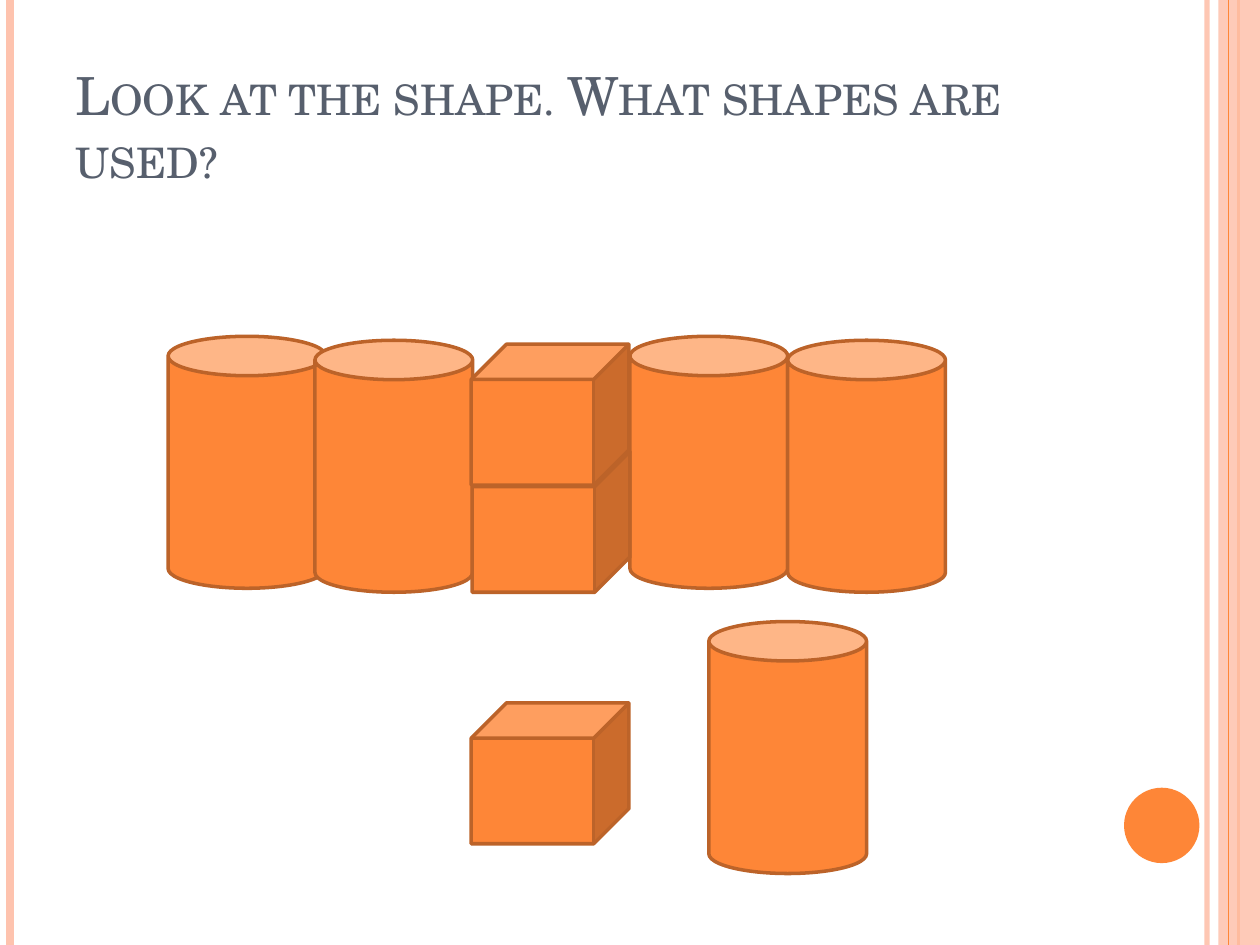
from pptx import Presentation
from pptx.dml.color import RGBColor as Rgb
from pptx.enum.shapes import MSO_CONNECTOR as Link, MSO_SHAPE as Kind
from pptx.enum.text import MSO_ANCHOR as Anchor
from pptx.oxml.ns import qn
from pptx.util import Cm, Pt
from lxml.etree import SubElement

# Content, lengths in cm
WIDE, HIGH = 25.4, 19.05
TITLE = "Look at the shape. What shapes are used?"
FONT = "TeX Gyre Schola"
HUES = {"pale": "FEC3AE", "orange": "FE8637", "edge": "BC6329", "ink": "575F6D"}

# Upright rules: x, colour, width in points, opacity in percent
OUTER = [(24.33, "pale", 3, 93), (0.2, "pale", 4.5, 100), (24.97, "orange", 1.5, 100)]
INNER = (24.77, "orange", 0.75, 100)
BAND = 24.56

SIZES = {Kind.CAN: (3.18, 5.08), Kind.CUBE: (3.18, 2.84)}
SOLIDS = [
    (Kind.CAN, 3.39, 6.78),
    (Kind.CAN, 6.35, 6.86),
    (Kind.CAN, 12.7, 6.78),
    (Kind.CAN, 15.88, 6.86),
    (Kind.CUBE, 9.52, 9.1),
    (Kind.CUBE, 9.5, 14.17),
    (Kind.CAN, 14.29, 12.53),
    (Kind.CUBE, 9.5, 6.94),
]

deck = Presentation()
deck.slide_width, deck.slide_height = Cm(WIDE), Cm(HIGH)
slide = deck.slides.add_slide(deck.slide_layouts[6])
shapes = slide.shapes


def hue(name):
    return Rgb.from_string(HUES[name])


def fade(part, share):
    """Set the opacity of the colours in a shape or line."""
    for node in part.element.iter(qn("a:srgbClr")):
        SubElement(node, qn("a:alpha")).set("val", str(share * 1000))


def add_rule(x, name, width, share):
    rule = shapes.add_connector(Link.STRAIGHT, Cm(x), 0, Cm(x), Cm(HIGH))
    rule.line.color.rgb = hue(name)
    rule.line.width = Pt(width)
    if share < 100:
        fade(rule, share)
    SubElement(rule.element.spPr, qn("a:effectLst"))


def add_solid(kind, x, y, w, h, name, edge=None):
    solid = shapes.add_shape(kind, Cm(x), Cm(y), Cm(w), Cm(h))
    solid.shadow.inherit = False
    solid.fill.solid()
    solid.fill.fore_color.rgb = hue(name)
    if edge:
        solid.line.color.rgb = hue(edge)
        solid.line.width = Pt(2)
    else:
        solid.line.fill.background()
    return solid


# Side rules, band and dot
for rule in OUTER:
    add_rule(*rule)
fade(add_solid(Kind.RECTANGLE, BAND, 0, WIDE - BAND, HIGH, "pale"), 87)
add_rule(*INNER)
add_solid(Kind.OVAL, 22.66, 15.88, 1.52, 1.52, "orange")

# Title in small capitals
box = shapes.add_textbox(Cm(1.27), Cm(0.76), Cm(20.75), Cm(3.18))
frame = box.text_frame
frame.word_wrap = True
frame.vertical_anchor = Anchor.BOTTOM
frame.text = TITLE
run = frame.paragraphs[0].runs[0]
run.font.name, run.font.size = FONT, Pt(30)
run.font.color.rgb = hue("ink")
run._r.get_or_add_rPr().set("cap", "small")

# Cans and cubes
for kind, x, y in SOLIDS:
    add_solid(kind, x, y, *SIZES[kind], "orange", "edge")

deck.save("out.pptx")
